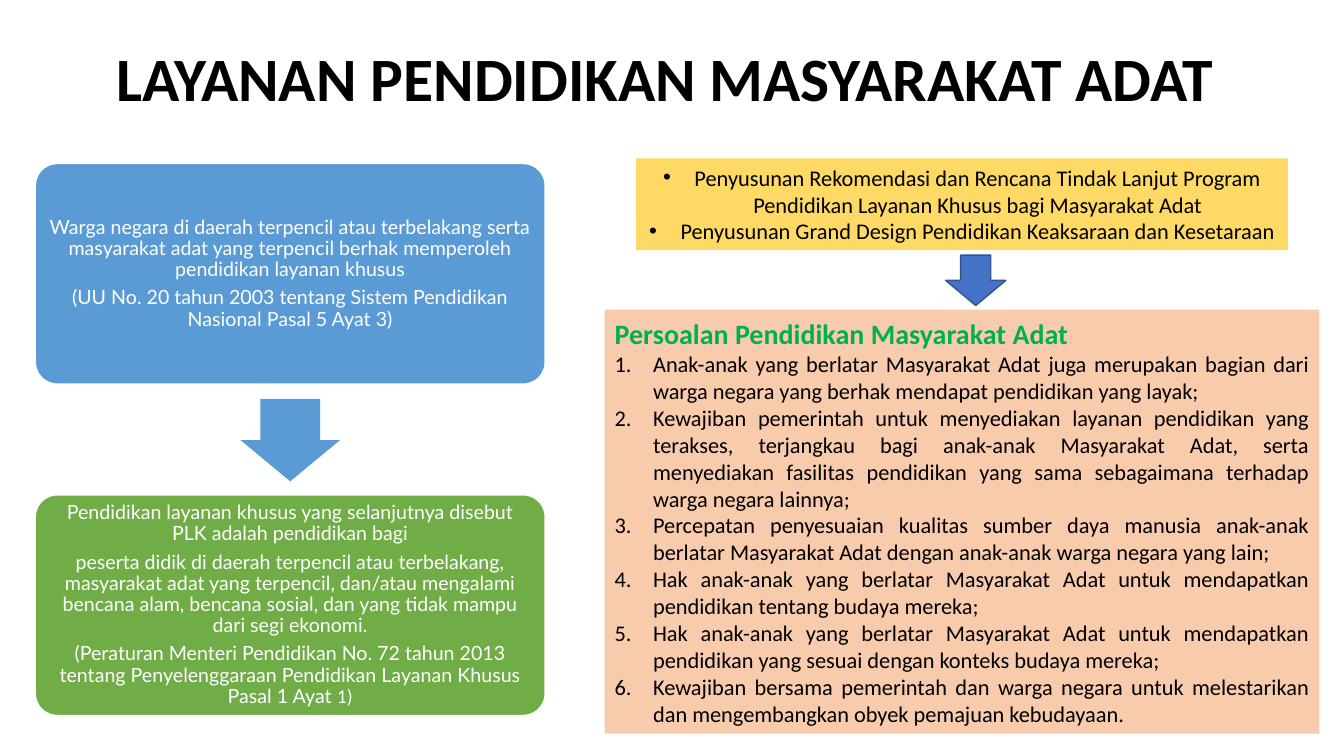
from lxml.etree import SubElement
from pptx import Presentation
from pptx.dml.color import RGBColor
from pptx.enum.shapes import MSO_SHAPE as SHAPE
from pptx.enum.text import MSO_ANCHOR as ANCHOR, MSO_AUTO_SIZE as AUTO_SIZE, PP_ALIGN as ALIGN
from pptx.oxml.ns import qn
from pptx.util import Cm, Pt

COLORS = {"black": "000000", "white": "FFFFFF", "blue": "5B9BD5", "green": "70AD47",
          "yellow": "FFD966", "peach": "F8CBAD", "arrow": "4472C4",
          "arrow_edge": "325491", "heading": "00B050"}


def add_block(kind, left, top, width, height, fill, edge=None):
    block = slide.shapes.add_shape(kind, Cm(left), Cm(top), Cm(width), Cm(height))
    block.shadow.inherit = False
    block.fill.solid()
    block.fill.fore_color.rgb = RGBColor.from_string(COLORS[fill])
    if edge:
        block.line.color.rgb = RGBColor.from_string(COLORS[edge])
        block.line.width = Pt(1)
    else:
        block.line.fill.background()
    block.text_frame.word_wrap = True
    block.text_frame.vertical_anchor = ANCHOR.MIDDLE
    return block


def write(frame, index, text, size, color, align, font="Calibri", bold=False, bullet=None, indent=0):
    line = frame.paragraphs[0] if index == 0 else frame.add_paragraph()
    line.text = text
    line.alignment = align
    if bullet:
        props = line._p.get_or_add_pPr()
        props.set("marL", str(Cm(indent)))
        props.set("indent", str(-Cm(indent)))
        SubElement(props, qn("a:buFont"), typeface="Arial" if bullet == "•" else "+mj-lt")
        if bullet == "•":
            SubElement(props, qn("a:buChar"), char=bullet)
        else:
            SubElement(props, qn("a:buAutoNum"), type=bullet)
    line.font.name = font
    line.font.size = Pt(size)
    line.font.bold = bold
    line.font.color.rgb = RGBColor.from_string(COLORS[color])
    return line


deck = Presentation()
deck.slide_width, deck.slide_height = Cm(33.87), Cm(19.05)
slide = deck.slides.add_slide(deck.slide_layouts[5])

# Title
title = slide.shapes.title
title.left, title.top, title.width, title.height = Cm(2.34), Cm(1.02), Cm(29.21), Cm(2.08)
title.text_frame.auto_size = AUTO_SIZE.NONE
title.text_frame.vertical_anchor = ANCHOR.MIDDLE
heading = write(title.text_frame, 0, "LAYANAN PENDIDIKAN MASYARAKAT ADAT ", 44, "black",
                ALIGN.CENTER, bold=True)
heading.line_spacing = 0.9

# Legal basis: two rounded boxes
legal_basis = [
    ("blue", 4.12, [
        "Warga negara di daerah terpencil atau terbelakang serta masyarakat adat yang terpencil "
        "berhak memperoleh pendidikan layanan khusus",
        "(UU No. 20 tahun 2003 tentang Sistem Pendidikan Nasional Pasal 5 Ayat 3)"]),
    ("green", 12.47, [
        "Pendidikan layanan khusus yang selanjutnya disebut PLK adalah pendidikan bagi",
        "peserta didik di daerah terpencil atau terbelakang, masyarakat adat yang terpencil, "
        "dan/atau mengalami bencana alam, bencana sosial, dan yang tidak mampu dari segi ekonomi.",
        "(Peraturan Menteri Pendidikan No. 72 tahun 2013 tentang Penyelenggaraan Pendidikan "
        "Layanan Khusus Pasal 1 Ayat "]),
]
for fill, top, clauses in legal_basis:
    law = add_block(SHAPE.ROUNDED_RECTANGLE, 0.89, top, 12.85, 5.56, fill, "white")
    law.adjustments[0] = 0.1
    frame = law.text_frame
    frame.margin_left = frame.margin_right = frame.margin_top = frame.margin_bottom = Cm(0.15)
    for index, clause in enumerate(clauses):
        clause_line = write(frame, index, clause, 14, "white", ALIGN.CENTER, font="Lato")
        clause_line.line_spacing = 0.9
        clause_line.space_after = Pt(5)
verse = clause_line.add_run()
verse.text = "1)"
verse.font.name = "Calibri"

# Arrow between the two laws
law_arrow = add_block(SHAPE.DOWN_ARROW, 6.06, 10.05, 2.51, 2.08, "blue")
law_arrow.adjustments[0] = 0.6

# Recommendations
recommendations = [
    "Penyusunan Rekomendasi dan Rencana Tindak Lanjut Program Pendidikan Layanan Khusus bagi "
    "Masyarakat Adat",
    "Penyusunan Grand Design Pendidikan Keaksaraan dan Kesetaraan",
]
plan = add_block(SHAPE.RECTANGLE, 16.03, 3.99, 16.43, 2.31, "yellow")
for index, text in enumerate(recommendations):
    write(plan.text_frame, index, text, 16, "black", ALIGN.CENTER, bullet="•", indent=0.79)

# Arrow from recommendations to issues
add_block(SHAPE.DOWN_ARROW, 23.83, 6.43, 1.52, 1.27, "arrow", "arrow_edge")

# Issues
issues = [
    "Anak-anak yang berlatar Masyarakat Adat juga merupakan bagian dari warga negara yang berhak "
    "mendapat pendidikan yang layak;",
    "Kewajiban pemerintah untuk menyediakan layanan pendidikan yang terakses, terjangkau bagi "
    "anak-anak Masyarakat Adat, serta menyediakan fasilitas pendidikan yang sama sebagaimana "
    "terhadap warga negara lainnya;",
    "Percepatan penyesuaian kualitas sumber daya manusia anak-anak berlatar Masyarakat Adat "
    "dengan anak-anak warga negara yang lain;",
    "Hak anak-anak yang berlatar Masyarakat Adat untuk mendapatkan pendidikan tentang budaya "
    "mereka;",
    "Hak anak-anak yang berlatar Masyarakat Adat untuk mendapatkan pendidikan yang sesuai dengan "
    "konteks budaya mereka;",
    "Kewajiban bersama pemerintah dan warga negara untuk melestarikan dan mengembangkan obyek "
    "pemajuan kebudayaan.",
]
problems = add_block(SHAPE.RECTANGLE, 15.24, 7.8, 18.01, 10.69, "peach")
write(problems.text_frame, 0, "Persoalan Pendidikan Masyarakat Adat", 20, "heading",
      ALIGN.JUSTIFY, bold=True)
for index, issue in enumerate(issues, start=1):
    write(problems.text_frame, index, issue, 16, "black", ALIGN.JUSTIFY,
          bullet="arabicPeriod", indent=0.97)

deck.save("out.pptx")
